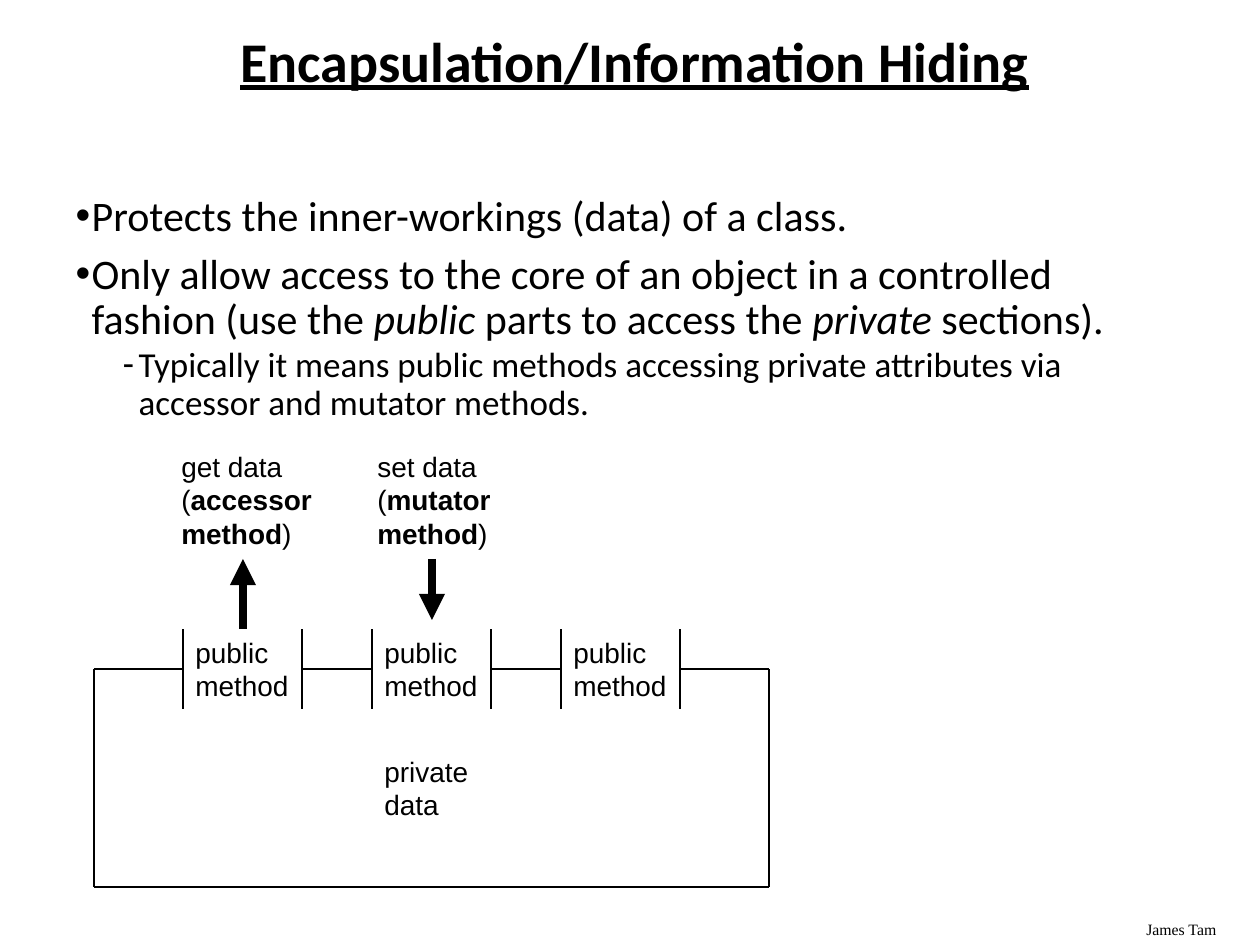
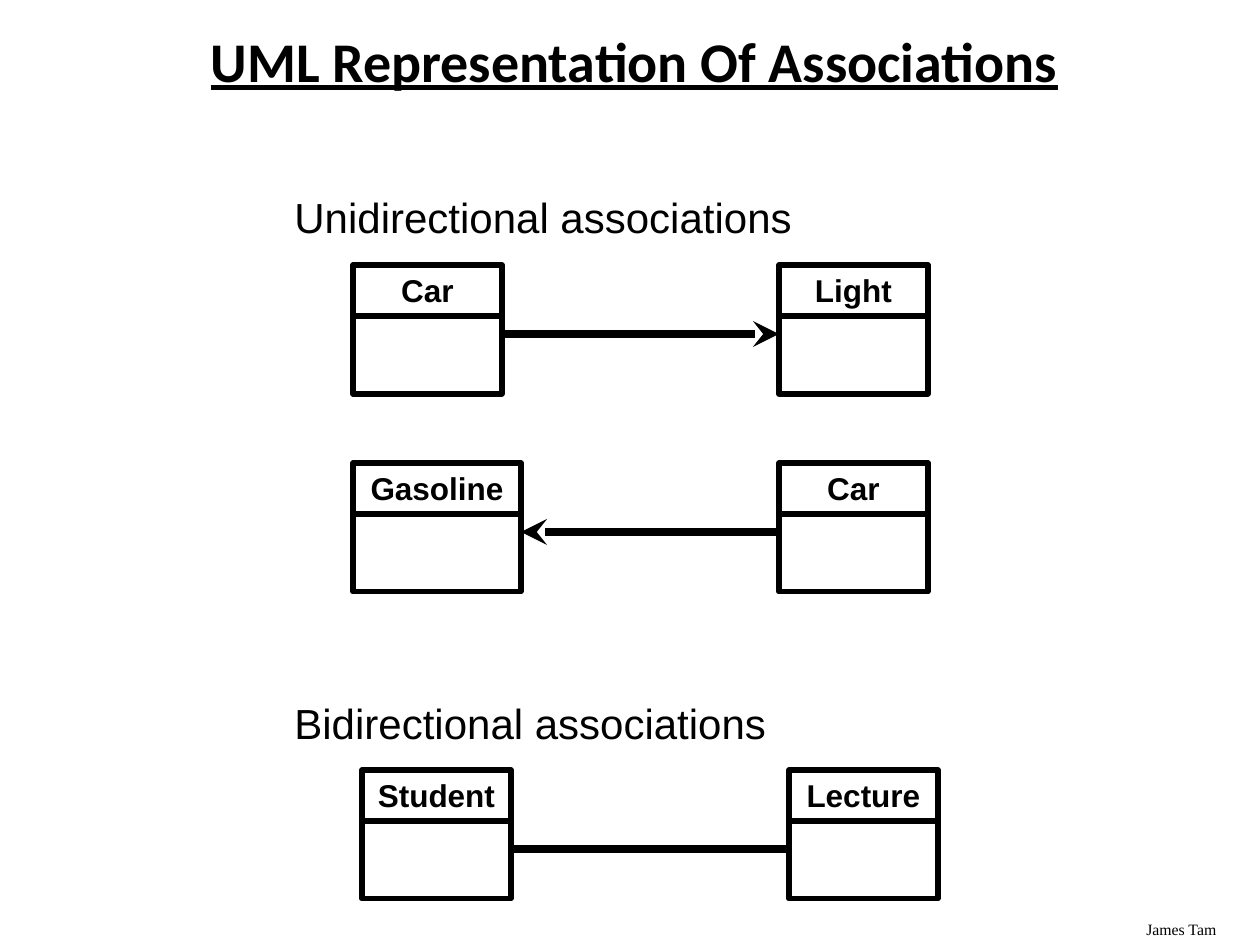
import pptx
import pptx.util
import pptx.dml.color
import pptx.enum.shapes
import pptx.enum.text
import pptx.oxml.ns
import lxml.etree

SCALE = 914400 // 126
COLORS = {"ink": "000000", "page": "FFFFFF"}
FONTS = {"head": "Calibri", "label": "Arial", "foot": "Times New Roman"}
ALIGN = pptx.enum.text.PP_ALIGN
ANCHOR = pptx.enum.text.MSO_ANCHOR
QN = pptx.oxml.ns.qn


def px(count):
    return pptx.util.Emu(round(count * 914400 / 126))


def tint(name):
    return pptx.dml.color.RGBColor.from_string(COLORS[name])


def place(shape, left, top, width, height):
    shape.left, shape.top = px(left), px(top)
    shape.width, shape.height = px(width), px(height)


def write(frame, text, size=16, font="label", align=ALIGN.LEFT, bold=False,
          under=False, mark=None, space=None, lead=None):
    """Text between asterisks takes the style named by mark."""
    para = frame.paragraphs[0]
    if para.runs:
        para = frame.add_paragraph()
    para.alignment = align
    if space is not None:
        para.space_before = pptx.util.Pt(space)
    if lead is not None:
        para.line_spacing = lead
    for index, part in enumerate(text.split("*")):
        run = para.add_run()
        run.text = part
        face = run.font
        face.name = FONTS[font]
        face.size = pptx.util.Pt(size)
        face.color.rgb = tint("ink")
        face.bold = bold
        face.underline = under
        if mark and index % 2:
            setattr(face, mark, True)
    return para


def label(shapes, text, left, top, width, height, **style):
    box = shapes.add_textbox(px(left), px(top), px(width), px(height))
    box.text_frame.word_wrap = True
    write(box.text_frame, text, **style)


def line(shapes, x1, y1, x2, y2, weight=1, head=None):
    link = shapes.add_connector(pptx.enum.shapes.MSO_CONNECTOR.STRAIGHT,
                                px(x1), px(y1), px(x2), px(y2))
    link.line.color.rgb = tint("ink")
    link.line.width = pptx.util.Pt(weight)
    if head:
        tail = lxml.etree.SubElement(link.line._get_or_add_ln(), QN("a:tailEnd"))
        tail.set("type", head)
    lxml.etree.SubElement(link._element.spPr, QN("a:effectLst"))


def bullet(frame, text, sign, left, level=0, **style):
    para = write(frame, text, font="head", lead=0.9, **style)
    para.level = level
    props = para._p.get_or_add_pPr()
    props.set("marL", str(px(left)))
    props.set("indent", str(px(-16)))
    lxml.etree.SubElement(props, QN("a:buChar")).set("char", sign)


def start(deck, layout, title):
    slide = deck.slides.add_slide(deck.slide_layouts[layout])
    slide.background.fill.solid()
    slide.background.fill.fore_color.rgb = tint("page")
    head = slide.shapes.title
    place(head, 99, 1, 1071, 126)
    frame = head.text_frame
    frame.auto_size = pptx.enum.text.MSO_AUTO_SIZE.NONE
    frame.vertical_anchor = ANCHOR.MIDDLE
    write(frame, title, size=32, font="head", align=ALIGN.CENTER,
          bold=True, under=True, lead=0.9)
    label(slide.shapes, "James Tam", 1134, 914, 126, 31, size=9, font="foot")
    return slide


def points(slide):
    body = slide.placeholders[1]
    place(body, 63, 189, 1106, 242)
    frame = body.text_frame
    frame.auto_size = pptx.enum.text.MSO_AUTO_SIZE.NONE
    frame.vertical_anchor = ANCHOR.TOP
    bullet(frame, "Protects the inner-workings (data) of a class.",
           "•", 16, size=24, space=7)
    bullet(frame, "Only allow access to the core of an object in a controlled "
           "fashion (use the *public* parts to access the *private* sections).",
           "•", 16, size=24, space=7, mark="italic")
    bullet(frame, "Typically it means public methods accessing private "
           "attributes via accessor and mutator methods.",
           "-", 63, level=1, size=20, space=2)


def capsule(slide):
    shapes = slide.shapes.add_group_shape().shapes
    left, right, top, base = 94, 769, 669, 887
    doors = [183 + 189 * step for step in range(3)]
    wide, high = 119, 40

    line(shapes, left, top, left, base)
    line(shapes, right, top, right, base)
    line(shapes, left, base, right, base)
    sides = [side for door in doors for side in (door, door + wide)]
    edges = [left, *sides, right]
    for x1, x2 in zip(edges[::2], edges[1::2]):
        line(shapes, x1, top, x2, top)
    for side in sides:
        line(shapes, side, top + high, side, top - high)
    for door in doors:
        label(shapes, "public method", door, top - high, wide + 4, 2 * high)
    label(shapes, "private data", doors[1], 748, wide + 4, 2 * high)

    line(shapes, 243, 629, 243, 559, weight=5, head="triangle")
    line(shapes, 432, 559, 432, 620, weight=5, head="triangle")
    for text, x in (("get data (*accessor method*)", 169),
                    ("set data (*mutator method*)", 365)):
        label(shapes, text, x, 443, 162, 113, mark="bold")


def entity(slide, name, left, top, width=149):
    shapes = slide.shapes.add_group_shape().shapes
    box = shapes.add_shape(pptx.enum.shapes.MSO_SHAPE.RECTANGLE,
                           px(left), px(top), px(width), px(129))
    box.shadow.inherit = False
    box.fill.background()
    box.line.color.rgb = tint("ink")
    box.line.width = pptx.util.Pt(3)
    label(shapes, name, left, top, width, 50, size=18, bold=True,
          align=ALIGN.CENTER)
    line(shapes, left, top + 51, left + width, top + 51, weight=3)


def main():
    deck = pptx.Presentation()
    deck.slide_width, deck.slide_height = px(1260), px(945)

    slide = start(deck, 1, "Encapsulation/Information Hiding")
    points(slide)
    capsule(slide)

    slide = start(deck, 5, "UML Representation Of Associations")
    for text, top in (("Unidirectional associations", 185),
                      ("Bidirectional associations", 691)):
        label(slide.shapes, text, 282, top, 576, 63, size=24)
    for name, left, top, width in (
            ("Car", 353, 265, 149), ("Light", 779, 265, 149),
            ("Gasoline", 353, 463, 168), ("Car", 779, 463, 149),
            ("Student", 362, 770, 149), ("Lecture", 789, 770, 149)):
        entity(slide, name, left, top, width)
    for x1, x2, y, head in ((502, 779, 334, "stealth"),
                            (779, 521, 532, "stealth"),
                            (511, 789, 849, None)):
        line(slide.shapes, x1, y, x2, y, weight=5, head=head)

    deck.save("out.pptx")


if __name__ == "__main__":
    main()
